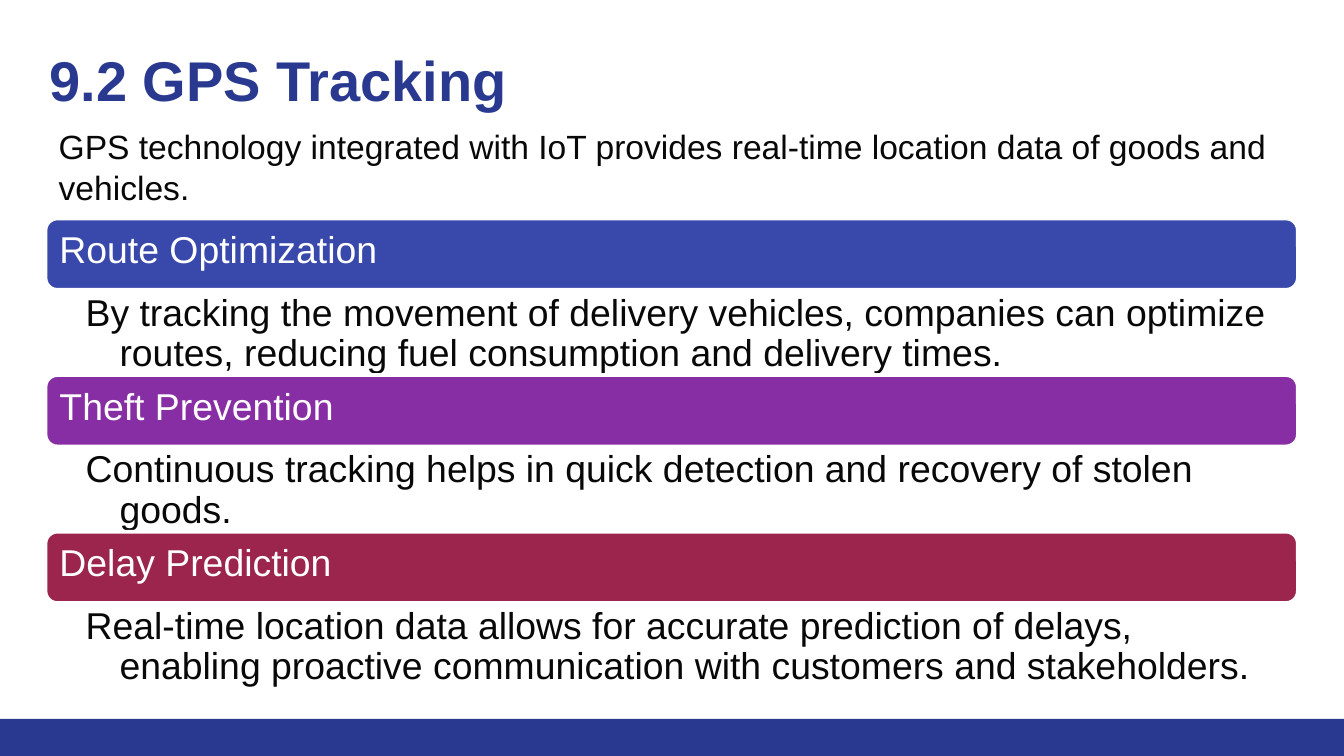
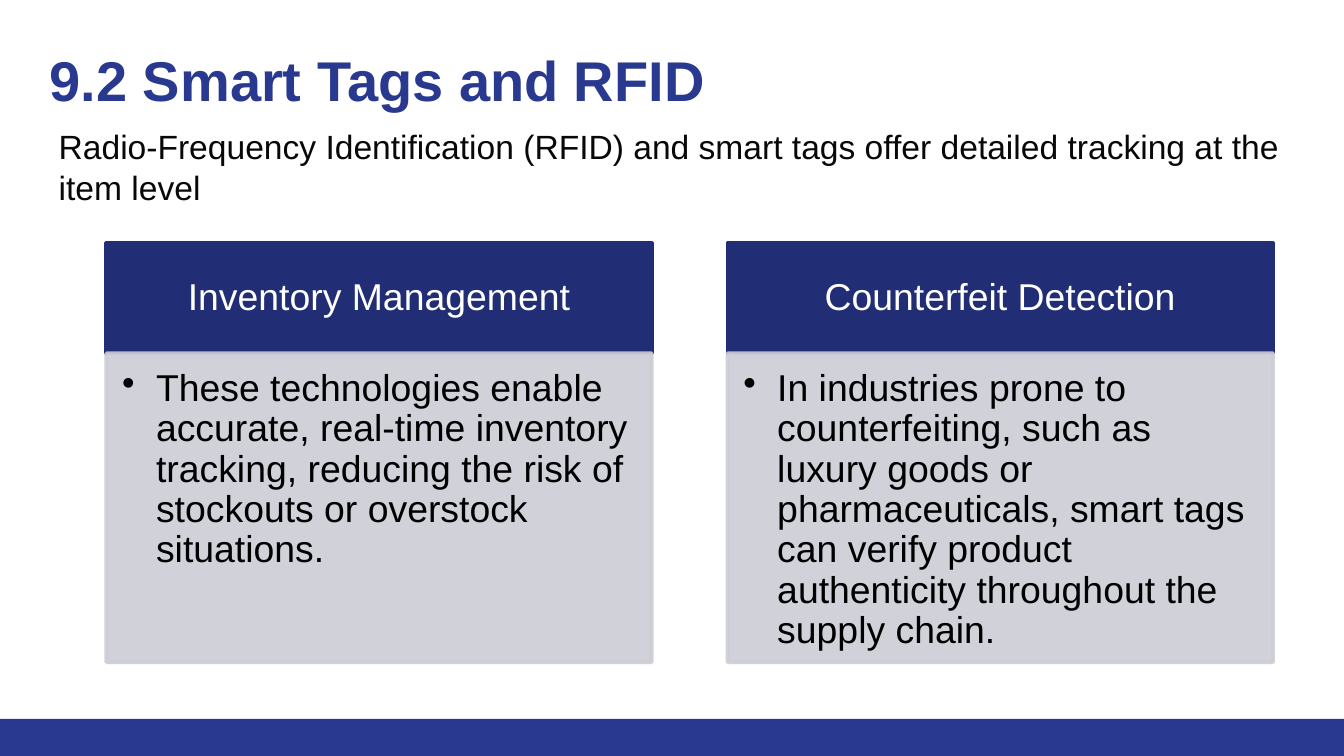
from dataclasses import dataclass

from lxml import etree
from pptx import Presentation
from pptx import util as u
from pptx.dml.color import RGBColor
from pptx.enum import shapes, text
from pptx.oxml import ns

GPS = {
    "title": "9.2 GPS Tracking",
    "intro": "GPS technology integrated with IoT provides real-time location "
             "data of goods and vehicles.",
    "parts": [
        ("Route Optimization", "3949AB",
         "By tracking the movement of delivery vehicles, companies can optimize "
         "routes, reducing fuel consumption and delivery times."),
        ("Theft Prevention", "882EA4",
         "Continuous tracking helps in quick detection and recovery of stolen "
         "goods."),
        ("Delay Prediction", "9C254D",
         "Real-time location data allows for accurate prediction of delays, "
         "enabling proactive communication with customers and stakeholders."),
    ],
}
TAGS = {
    "title": "9.2 Smart Tags and RFID",
    "intro": "Radio-Frequency Identification (RFID) and smart tags offer "
             "detailed tracking at the item level",
    "parts": [
        ("Inventory Management",
         "These technologies enable accurate, real-time inventory tracking, "
         "reducing the risk of stockouts or overstock situations."),
        ("Counterfeit Detection",
         "In industries prone to counterfeiting, such as luxury goods or "
         "pharmaceuticals, smart tags can verify product authenticity "
         "throughout the supply chain."),
    ],
}


@dataclass(frozen=True)
class Theme:
    font: str = "Arial"
    brand: str = "2A3990"
    navy: str = "212D74"
    grey: str = "CDCDD6"
    ink: str = "080808"
    black: str = "000000"
    white: str = "FFFFFF"
    head: int = 30
    lead: int = 18
    body: int = 20
    edge: int = 2


T = Theme()
WIDE, HIGH = 25.4, 14.29
LEFT, SPAN = 0.86, 23.67
HANG = 0.64


def paint(fill, color, alpha=None):
    fill.solid()
    fill.fore_color.rgb = RGBColor.from_string(color)
    if alpha:
        tone = fill._xPr.find(".//" + ns.qn("a:srgbClr"))
        etree.SubElement(tone, ns.qn("a:alpha"), val=str(alpha * 1000))


def block(slide, kind, at, color, edge=None, alpha=None):
    """Add a filled preset shape, outlined only when an edge colour is given."""
    shape = slide.shapes.add_shape(kind, *map(u.Cm, at))
    shape.shadow.inherit = False
    paint(shape.fill, color, alpha)
    if edge:
        paint(shape.line.fill, edge, alpha)
        shape.line.width = u.Pt(T.edge)
    else:
        shape.line.fill.background()
    return shape


def field(slide, at):
    return slide.shapes.add_textbox(*map(u.Cm, at))


def write(shape, words, size, color, pads, bold=False, mid=False,
          center=False, tight=True, hang=False, dot=False):
    frame = shape.text_frame
    frame.word_wrap = True
    frame.vertical_anchor = (text.MSO_ANCHOR.MIDDLE if mid
                             else text.MSO_ANCHOR.TOP)
    (frame.margin_left, frame.margin_top,
     frame.margin_right, frame.margin_bottom) = map(u.Cm, pads)
    para = frame.paragraphs[0]
    para.text = words
    para.alignment = text.PP_ALIGN.CENTER if center else text.PP_ALIGN.LEFT
    if tight:
        para.line_spacing = 0.9
    if hang:
        para.level = 1
        props = para._p.get_or_add_pPr()
        props.set("marL", str(u.Cm(HANG)))
        props.set("indent", str(-u.Cm(HANG)))
        if dot:
            tone = etree.SubElement(props, ns.qn("a:buClr"))
            etree.SubElement(tone, ns.qn("a:srgbClr"), val=T.black)
            etree.SubElement(props, ns.qn("a:buChar"), char="•")
    font = para.font
    font.name, font.size, font.bold = T.font, u.Pt(size), bold
    font.color.rgb = RGBColor.from_string(color)


def start(deck, data):
    """Add a slide with the shared bottom band, title and intro."""
    slide = deck.slides.add_slide(deck.slide_layouts[6])
    band = 0.7
    block(slide, shapes.MSO_SHAPE.RECTANGLE,
          (0, HIGH - band, WIDE, band), T.brand)
    write(field(slide, (0.69, 0.51, 23.37, 2.26)), data["title"], T.head,
          T.brand, (0.25, 0.36, 0.25, 0.25), bold=True, tight=False)
    intro = field(slide, (LEFT, 2.26, SPAN, 1.8))
    write(intro, data["intro"], T.lead, T.ink, (0.25, 0.13, 0.25, 0.13),
          tight=False)
    intro.text_frame.auto_size = text.MSO_AUTO_SIZE.SHAPE_TO_FIT_TEXT
    return slide


def stack(slide, parts):
    """Place full-width bars, each with its text below."""
    top, bar, note = 4.13, 1.35, 1.61
    for i, (name, color, words) in enumerate(parts):
        y = top + i * (bar + note)
        head = block(slide, shapes.MSO_SHAPE.ROUNDED_RECTANGLE,
                     (LEFT, y, SPAN, bar), color, T.white)
        write(head, name, T.body, T.white, (0.2, 0.2, 0.2, 0.3), mid=True)
        write(field(slide, (LEFT, y + bar, SPAN, note)), words, T.body, T.ink,
              (0.76, 0.08, 0.41, 0.08), hang=True)


def cards(slide, parts):
    """Place side-by-side cards: a dark head over a grey body."""
    left, top, wide, gap, head, body = 2.01, 4.6, 10.31, 1.43, 2.08, 5.84
    rect = shapes.MSO_SHAPE.RECTANGLE
    for i, (name, words) in enumerate(parts):
        x = left + i * (wide + gap)
        cap = block(slide, rect, (x, top, wide, head), T.navy, T.navy)
        write(cap, name, T.body, T.white, (0.41, 0.23, 0.41, 0.23),
              mid=True, center=True)
        card = block(slide, rect, (x, top + head, wide, body),
                     T.grey, T.grey, alpha=90)
        write(card, words, T.body, T.black, (0.3, 0.3, 0.41, 0.43),
              hang=True, dot=True)


def main():
    deck = Presentation()
    deck.slide_width, deck.slide_height = u.Cm(WIDE), u.Cm(HIGH)
    for data, draw in ((GPS, stack), (TAGS, cards)):
        draw(start(deck, data), data["parts"])
    deck.save("out.pptx")


if __name__ == "__main__":
    main()
